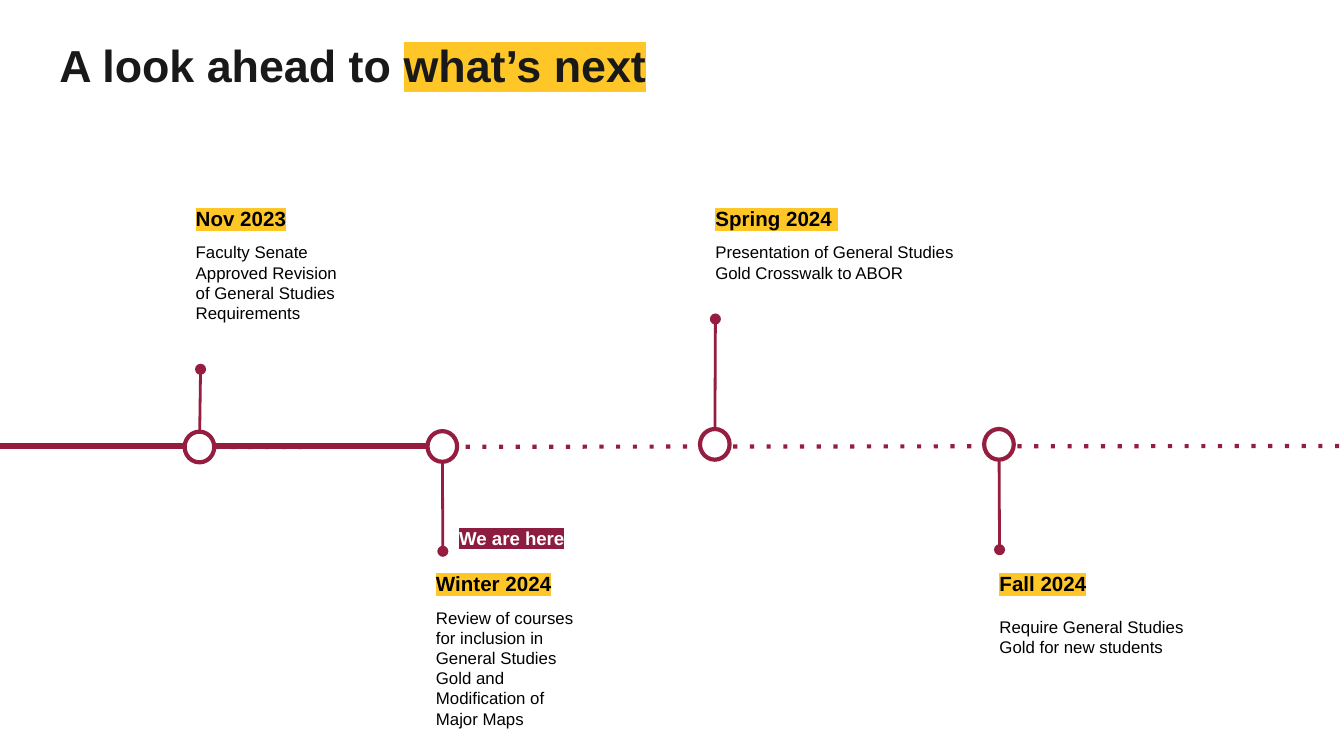
import pptx
import pptx.util
import pptx.dml.color
import pptx.enum.shapes
import pptx.enum.text
import pptx.oxml.ns
from lxml import etree
from pptx.util import Cm, Pt

MAROON = "951D40"
GOLD = "FFC627"
BLACK = "000000"
WHITE = "FFFFFF"


def rgb(value):
    return pptx.dml.color.RGBColor.from_string(value)


def add_xml(parent, tag, **attrs):
    return etree.SubElement(parent, pptx.oxml.ns.qn(tag), attrs)


def add_run(p, text, size=9, color=BLACK, bold=False, highlight=None):
    r = p.add_run()
    r.text = text
    r.font.size = Pt(size)
    r.font.bold = bold
    r.font.color.rgb = rgb(color)
    if highlight:
        rPr = r.font._element
        mark = add_xml(rPr, "a:highlight")
        add_xml(mark, "a:srgbClr", val=highlight)
        rPr.find(pptx.oxml.ns.qn("a:solidFill")).addnext(mark)
    r.font.name = "Arial"
    return r


class Timeline:
    """Style and drawing methods for one timeline slide."""

    node_w, node_h = 0.56, 0.58

    def __init__(self, slide):
        self.s = slide

    def frame(self, sp, inset):
        tf = sp.text_frame
        tf.word_wrap = True
        tf.margin_left = tf.margin_right = Cm(inset)
        tf.margin_top = tf.margin_bottom = Cm(inset)
        return tf

    def title(self, plain, marked):
        sp = self.s.shapes.title
        sp.left, sp.top, sp.width, sp.height = Cm(0.87), Cm(0.42), Cm(21.54), Cm(1.6)
        tf = self.frame(sp, 0.25)
        tf.vertical_anchor = pptx.enum.text.MSO_ANCHOR.MIDDLE
        p = tf.paragraphs[0]
        p.alignment = pptx.enum.text.PP_ALIGN.LEFT
        add_run(p, plain, size=24, color="191919", bold=True)
        add_run(p, marked, size=24, color="191919", bold=True, highlight=GOLD)

    def line(self, x1, y1, x2, y2, width, dash=None, tail=None):
        kind = pptx.enum.shapes.MSO_CONNECTOR.STRAIGHT
        sp = self.s.shapes.add_connector(kind, Cm(x1), Cm(y1), Cm(x2), Cm(y2))
        sp.line.color.rgb = rgb(MAROON)
        sp.line.width = Pt(width)
        ln = sp.line._get_or_add_ln()
        if dash:
            add_xml(ln, "a:prstDash", val=dash)
        if tail:
            add_xml(ln, "a:tailEnd", type=tail)
        add_xml(sp._element.spPr, "a:effectLst")

    def node(self, x, y):
        w, h = self.node_w, self.node_h
        sp = self.s.shapes.add_shape(pptx.enum.shapes.MSO_SHAPE.OVAL,
                                     Cm(x - w / 2), Cm(y - h / 2), Cm(w), Cm(h))
        sp.shadow.inherit = False
        sp.fill.solid()
        sp.fill.fore_color.rgb = rgb(WHITE)
        sp.line.color.rgb = rgb(MAROON)
        sp.line.width = Pt(2.25)

    def text(self, x, y, w, h, text, inset=0, **style):
        sp = self.s.shapes.add_textbox(Cm(x), Cm(y), Cm(w), Cm(h))
        tf = self.frame(sp, inset)
        add_run(tf.paragraphs[0], text, **style)
        return tf

    def event(self, x, y, w, h, date, body, gap):
        tf = self.text(x, y, w, h, date, size=11, bold=True, highlight=GOLD)
        p = tf.add_paragraph()
        p.space_before = Pt(gap)
        add_run(p, body)


# node x, node y, stem tip x, y, text box (x, y, w, h), date, body, gap
EVENTS = [
    (3.77, 8.45, 3.79, 6.98, (3.7, 3.9, 2.9, 2.36), "Nov 2023",
     "Faculty Senate Approved Revision of General Studies Requirements", 6),
    (8.36, 8.44, 8.37, 10.42, (8.24, 10.8, 2.9, 1.45), "Winter 2024",
     "Review of courses for inclusion in General Studies Gold and "
     "Modification of Major Maps", 6),
    (13.51, 8.4, 13.52, 6.03, (13.52, 3.9, 4.8, 1.45), "Spring 2024 ",
     "Presentation of General Studies Gold Crosswalk to ABOR", 6),
    (18.88, 8.4, 18.89, 10.39, (18.89, 10.8, 3.61, 1.45), "Fall 2024",
     "Require General Studies Gold for new students", 11),
]


def main():
    prs = pptx.Presentation()
    prs.slide_width, prs.slide_height = Cm(25.4), Cm(14.29)
    tl = Timeline(prs.slides.add_slide(prs.slide_layouts[5]))
    tl.title("A look ahead to ", "what’s next")

    # Axis: dotted for the future, solid up to the present
    tl.line(4.06, 8.45, 25.4, 8.43, 2.25, dash="dot")
    tl.line(0, 8.43, 8.08, 8.43, 3)

    # Events
    for x, y, tip_x, tip_y, box, date, body, gap in EVENTS:
        tl.line(x, y, tip_x, tip_y, 1.5, tail="oval")
        tl.node(x, y)
        tl.event(*box, date, body, gap)

    # Present marker
    tl.text(8.43, 9.74, 2.7, 1.09, "We are here", inset=0.25,
            size=10, color=WHITE, bold=True, highlight="8C1D40")

    prs.save("out.pptx")


if __name__ == "__main__":
    main()
